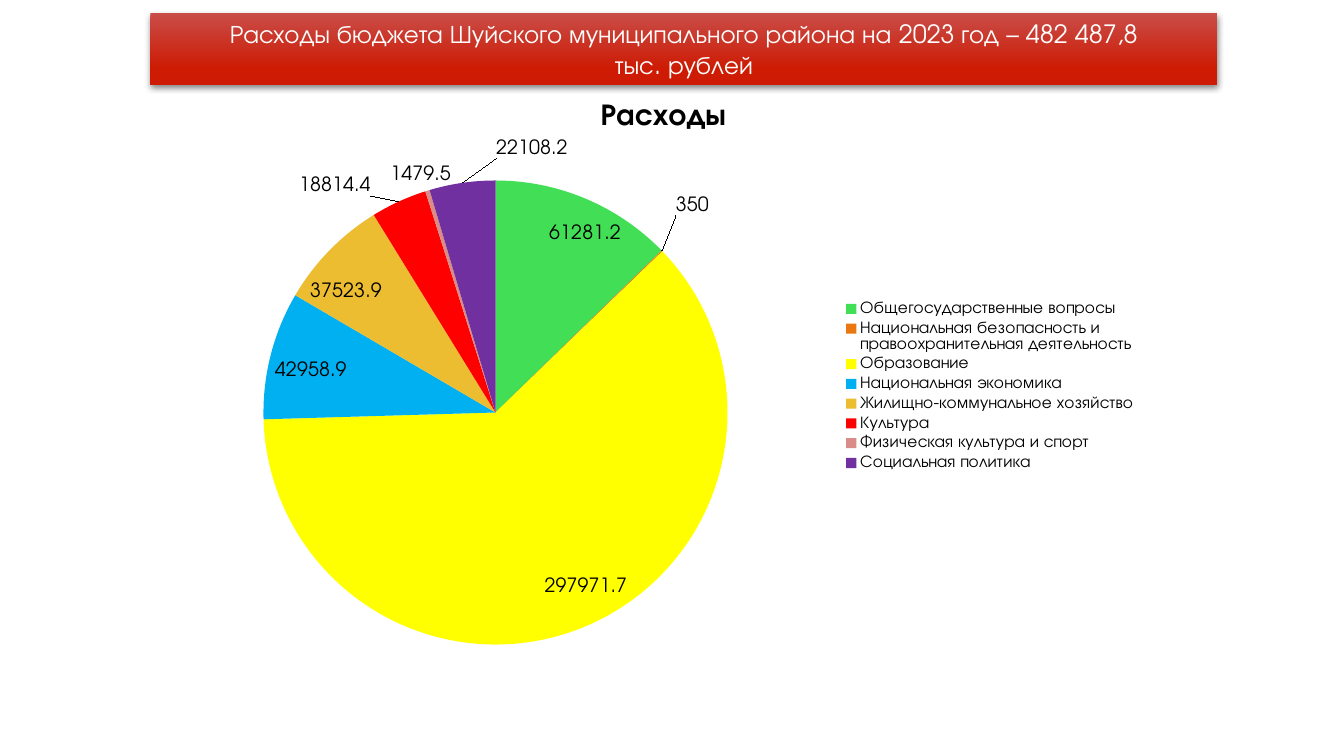
from pptx import Presentation
from pptx.chart.data import CategoryChartData
from pptx.dml.color import RGBColor
from pptx.enum.chart import XL_CHART_TYPE, XL_LABEL_POSITION, XL_LEGEND_POSITION
from pptx.enum.text import MSO_ANCHOR, MSO_AUTO_SIZE, PP_ALIGN
from pptx.oxml import parse_xml
from pptx.oxml.ns import nsdecls
from pptx.util import Pt

FONT = "TeX Gyre Adventor"
BLACK = RGBColor(0x00, 0x00, 0x00)
WHITE = RGBColor(0xFF, 0xFF, 0xFF)
LIGHT_RED = RGBColor(0xC9, 0x4D, 0x48)
DARK_RED = RGBColor(0xCD, 0x1B, 0x04)
GREEN = RGBColor(0x42, 0xDE, 0x55)
ORANGE = RGBColor(0xEB, 0x77, 0x12)
YELLOW = RGBColor(0xFF, 0xFF, 0x00)
BLUE = RGBColor(0x00, 0xB0, 0xF0)
GOLD = RGBColor(0xEC, 0xBD, 0x31)
RED = RGBColor(0xFF, 0x00, 0x00)
PINK = RGBColor(0xD9, 0x8C, 0x88)
PURPLE = RGBColor(0x70, 0x30, 0xA0)

TITLE_LINES = [
    "Расходы бюджета Шуйского муниципального района на 2023 год – 482 487,8",
    "тыс. рублей",
]
EXPENSES = [
    ("Общегосударственные вопросы", 61281.2, GREEN),
    ("Национальная безопасность и правоохранительная деятельность", 350, ORANGE),
    ("Образование", 297971.7, YELLOW),
    ("Национальная экономика", 42958.9, BLUE),
    ("Жилищно-коммунальное хозяйство", 37523.9, GOLD),
    ("Культура", 18814.4, RED),
    ("Физическая культура и спорт", 1479.5, PINK),
    ("Социальная политика", 22108.2, PURPLE),
]
# Point index: shift of its label as a share of the chart's width and height
LABEL_SHIFTS = {1: (0.01, -0.05), 7: (0.11, -0.03)}


def manual_layout(**values):
    """Return a c:layout element holding the given manual settings in order."""
    settings = "".join(f'<c:{name} val="{value}"/>' for name, value in values.items())
    return parse_xml(
        f'<c:layout {nsdecls("c")}><c:manualLayout>{settings}</c:manualLayout></c:layout>'
    )


class BudgetSlide:
    def __init__(self, presentation):
        self.slide = presentation.slides.add_slide(presentation.slide_layouts[5])

    def style_font(self, font, size, color=BLACK, bold=False):
        font.name = FONT
        font.size = Pt(size)
        font.bold = bold
        font.color.rgb = color

    def add_title(self, lines, left, top, width, height):
        title = self.slide.shapes.title
        title.left, title.top = Pt(left), Pt(top)
        title.width, title.height = Pt(width), Pt(height)
        title.fill.gradient()
        title.fill.gradient_angle = 270
        stops = title.fill.gradient_stops
        for stop, color, position in zip(stops, (LIGHT_RED, DARK_RED), (0, 0.78)):
            stop.color.rgb = color
            stop.position = position
        title.line.fill.background()
        title.element.spPr.append(parse_xml(
            f'<a:effectLst {nsdecls("a")}><a:outerShdw blurRad="{Pt(4.5)}" '
            f'dist="{Pt(1.5)}" dir="5400000" rotWithShape="0"><a:srgbClr val="000000">'
            '<a:alpha val="48000"/></a:srgbClr></a:outerShdw></a:effectLst>'
        ))
        frame = title.text_frame
        frame.word_wrap = True
        frame.auto_size = MSO_AUTO_SIZE.NONE
        frame.vertical_anchor = MSO_ANCHOR.MIDDLE
        for index, line in enumerate(lines):
            paragraph = frame.add_paragraph() if index else frame.paragraphs[0]
            paragraph.alignment = PP_ALIGN.CENTER
            run = paragraph.add_run()
            run.text = line
            self.style_font(run.font, 18, WHITE)

    def add_pie(self, name, rows, left, top, width, height):
        data = CategoryChartData()
        data.categories = [category for category, _, _ in rows]
        data.add_series(name, [value for _, value, _ in rows])
        chart = self.slide.shapes.add_chart(
            XL_CHART_TYPE.PIE, Pt(left), Pt(top), Pt(width), Pt(height), data
        ).chart
        self.style_font(chart.font, 18)
        chart.has_title = True
        run = chart.chart_title.text_frame.paragraphs[0].add_run()
        run.text = name
        self.style_font(run.font, 21.6, bold=True)
        chart.has_legend = True
        chart.legend.position = XL_LEGEND_POSITION.RIGHT
        chart.legend.include_in_layout = False
        self.style_font(chart.legend.font, 12)

        plot = chart.plots[0]
        plot.vary_by_categories = True
        plot_area = chart.element.chart.plotArea
        for layout in plot_area.findall("{*}layout"):
            plot_area.remove(layout)
        plot_area.insert(0, manual_layout(
            layoutTarget="inner", xMode="edge", yMode="edge",
            x=0.05, y=0.168, w=0.553, h=0.75,
        ))

        series = plot.series[0]
        for index, (_, _, color) in enumerate(rows):
            fill = series.points[index].format.fill
            fill.solid()
            fill.fore_color.rgb = color
        self.label_pie(series)

    def label_pie(self, series):
        labels = series.data_labels
        labels.show_value = True
        labels.position = XL_LABEL_POSITION.BEST_FIT
        labels.number_format = "General"
        labels.number_format_is_linked = False
        self.style_font(labels.font, 14)
        for index, (x, y) in LABEL_SHIFTS.items():
            label = series.points[index].data_label
            label.position = XL_LABEL_POSITION.BEST_FIT
            self.style_font(label.font, 14)
        for element in series.data_labels._element.findall("{*}dLbl"):
            x, y = LABEL_SHIFTS[element.idx.val]
            element.insert(1, manual_layout(x=x, y=y))


def main():
    presentation = Presentation()
    presentation.slide_width, presentation.slide_height = Pt(960), Pt(540)
    budget = BudgetSlide(presentation)
    budget.add_title(TITLE_LINES, 107.5, 9.5, 762, 51)
    budget.add_pie("Расходы", EXPENSES, 128, 54.7, 692, 442)
    presentation.save("out.pptx")


if __name__ == "__main__":
    main()
